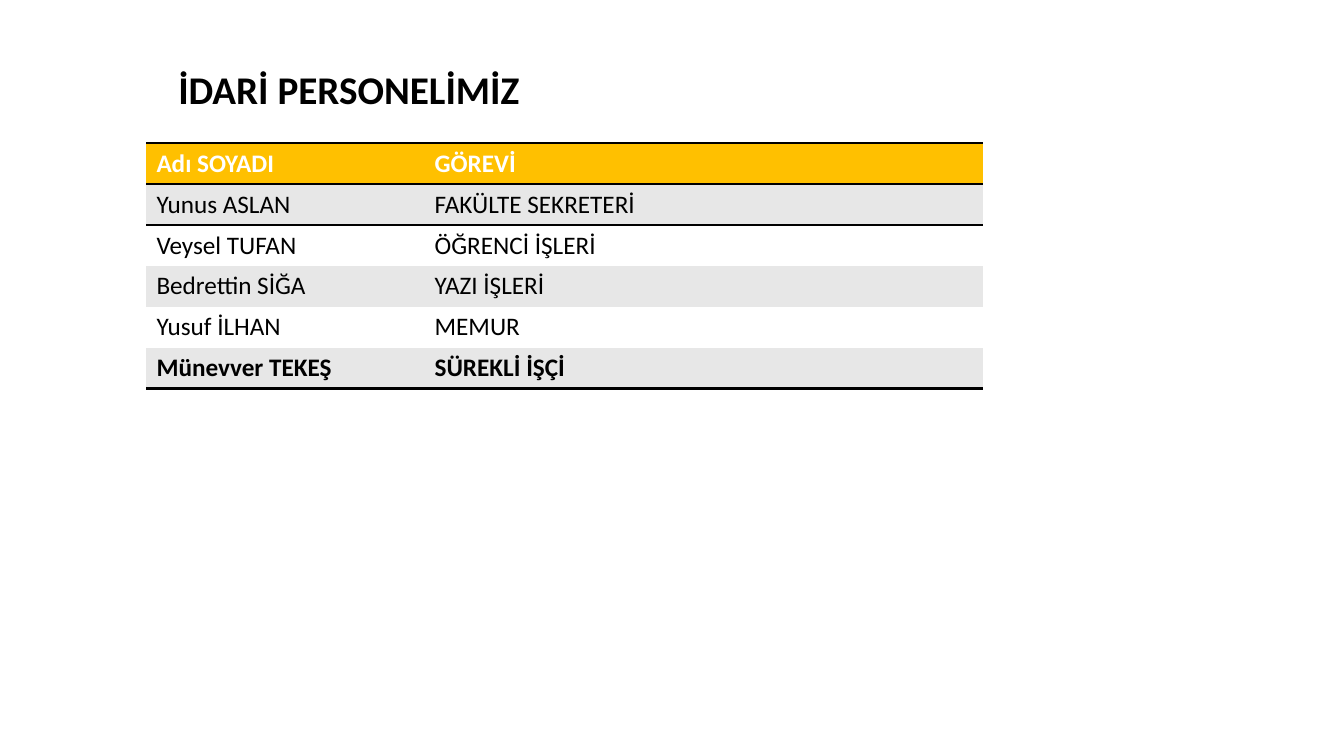
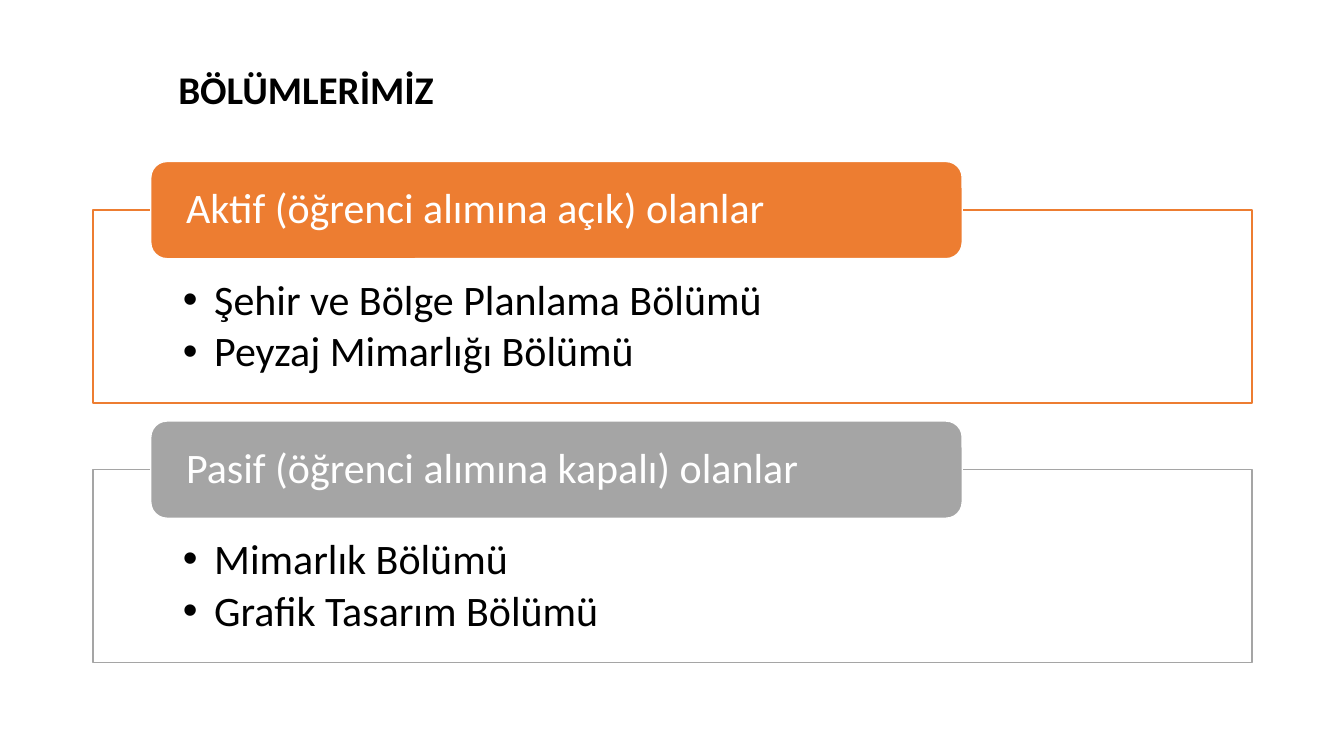
from dataclasses import dataclass

from lxml import etree
from pptx import Presentation
from pptx.dml.color import RGBColor
from pptx.enum.shapes import MSO_SHAPE
from pptx.enum.text import MSO_ANCHOR, MSO_AUTO_SIZE, PP_ALIGN
from pptx.oxml.ns import qn
from pptx.util import Cm, Pt

RECTANGLE, ROUNDED = MSO_SHAPE.RECTANGLE, MSO_SHAPE.ROUNDED_RECTANGLE
TOP, MIDDLE = MSO_ANCHOR.TOP, MSO_ANCHOR.MIDDLE
LEFT, NO_AUTO_SIZE = PP_ALIGN.LEFT, MSO_AUTO_SIZE.NONE
TITLE_ONLY = 5
NO_STYLE_NO_GRID = "{2D5ABB26-0587-4C30-8999-92F81FD0307C}"


@dataclass(frozen=True)
class Theme:
    font: str = "Calibri"
    black: str = "000000"
    white: str = "FFFFFF"
    gold: str = "FFC000"
    band: str = "E7E7E7"
    orange: str = "ED7D31"
    grey: str = "A5A5A5"
    title_size: int = 28
    table_size: int = 18
    body_size: int = 30


theme = Theme()


def format_paragraph(paragraph, size, color, bold=False, **spacing):
    for name, value in {"alignment": LEFT, **spacing}.items():
        setattr(paragraph, name, value)
    font_format = {"name": theme.font, "size": Pt(size), "bold": bold}
    for name, value in font_format.items():
        setattr(paragraph.font, name, value)
    paragraph.font.color.rgb = RGBColor.from_string(color)


def add_box(slide, kind, place, fill, line, frame_format):
    shape = slide.shapes.add_shape(kind, *(Cm(length) for length in place))
    shape.shadow.inherit = False
    shape.fill.solid()
    shape.fill.fore_color.rgb = RGBColor.from_string(fill)
    shape.line.color.rgb = RGBColor.from_string(line)
    shape.line.width = Pt(1)
    for name, value in {"word_wrap": True, **frame_format}.items():
        setattr(shape.text_frame, name, value)
    return shape


presentation = Presentation()
presentation.slide_width, presentation.slide_height = Cm(33.87), Cm(19.05)

# Slides with their shared title style
slides = []
for heading in ("İDARİ PERSONELİMİZ", "BÖLÜMLERİMİZ"):
    slide = presentation.slides.add_slide(presentation.slide_layouts[TITLE_ONLY])
    title = slide.shapes.title
    title_place = {"left": 4.24, "top": 1.02, "width": 20.52, "height": 2.59}
    for name, length in title_place.items():
        setattr(title, name, Cm(length))
    title.text_frame.text = heading
    title.text_frame.vertical_anchor = MIDDLE
    title.text_frame.auto_size = NO_AUTO_SIZE
    format_paragraph(title.text_frame.paragraphs[0], theme.title_size,
                     theme.black, True, line_spacing=0.9)
    slides.append(slide)
staff_slide, departments_slide = slides

# Staff table
staff = [
    ("Adı SOYADI", "GÖREVİ"),
    ("Yunus ASLAN", "FAKÜLTE SEKRETERİ"),
    ("Veysel TUFAN", "ÖĞRENCİ İŞLERİ"),
    ("Bedrettin SİĞA", "YAZI İŞLERİ"),
    ("Yusuf İLHAN", "MEMUR"),
    ("Münevver TEKEŞ", "SÜREKLİ İŞÇİ"),
]
last_row = len(staff) - 1
row_height = Cm(1.03)
table_frame = staff_slide.shapes.add_table(
    len(staff), 2, Cm(3.69), Cm(3.61), Cm(21.08), row_height * len(staff))
table = table_frame.table
table.horz_banding = False
next(table_frame.element.iter(qn("a:tableStyleId"))).text = NO_STYLE_NO_GRID
for column, width in zip(table.columns, (7.01, 14.07)):
    column.width = Cm(width)

for row_index, values in enumerate(staff):
    table.rows[row_index].height = row_height
    is_header = row_index == 0
    fill = theme.gold if is_header else theme.band if row_index % 2 else theme.white
    # Rules lie above and below the header and below the last row
    edges = []
    if row_index in (0, 1):
        edges.append("a:lnT")
    if row_index in (0, last_row):
        edges.append("a:lnB")
    for column_index, value in enumerate(values):
        cell = table.cell(row_index, column_index)
        cell.text = value
        format_paragraph(cell.text_frame.paragraphs[0], theme.table_size,
                         theme.white if is_header else theme.black,
                         row_index in (0, last_row))
        properties = cell._tc.get_or_add_tcPr()
        for edge in edges:
            border = etree.SubElement(properties, qn(edge), w=str(Pt(2)))
            border_fill = etree.SubElement(border, qn("a:solidFill"))
            etree.SubElement(border_fill, qn("a:srgbClr"), val=theme.black)
        cell.fill.solid()
        cell.fill.fore_color.rgb = RGBColor.from_string(fill)

# Department groups: outlined list with a label over its top edge
groups = [
    ("Aktif (öğrenci alımına açık) olanlar", theme.orange,
     ["Şehir ve Bölge Planlama Bölümü", "Peyzaj Mimarlığı Bölümü"]),
    ("Pasif (öğrenci alımına kapalı) olanlar", theme.grey,
     ["Mimarlık Bölümü", "Grafik Tasarım Bölümü"]),
]
list_format = {
    "vertical_anchor": TOP, "margin_left": Cm(2.27), "margin_right": Cm(2.27),
    "margin_top": Cm(1.73), "margin_bottom": Cm(0.58),
}
label_format = {
    "vertical_anchor": MIDDLE, "margin_left": Cm(0.77), "margin_right": Cm(0.77),
    "margin_top": 0, "margin_bottom": 0,
}
first_top, group_step, label_height = 4.07, 6.54, 2.45
for group_index, (label, color, departments) in enumerate(groups):
    label_top = first_top + group_index * group_step
    list_box = add_box(departments_slide, RECTANGLE,
                       (2.34, label_top + label_height / 2, 29.21, 4.86),
                       theme.white, color, list_format)
    list_box.text_frame.text = "\n".join(departments)
    for paragraph in list_box.text_frame.paragraphs:
        paragraph.level = 1
        properties = paragraph._p.get_or_add_pPr()
        properties.set("marL", str(Cm(0.79)))
        properties.set("indent", str(-Cm(0.79)))
        etree.SubElement(properties, qn("a:buFont"), typeface="Arial")
        etree.SubElement(properties, qn("a:buChar"), char="•")
        format_paragraph(paragraph, theme.body_size, theme.black,
                         line_spacing=0.9, space_after=Pt(4.5))

    label_box = add_box(departments_slide, ROUNDED,
                        (3.8, label_top, 20.45, label_height),
                        color, theme.white, label_format)
    label_box.text_frame.text = label
    format_paragraph(label_box.text_frame.paragraphs[0], theme.body_size,
                     theme.white, line_spacing=0.9)

presentation.save("out.pptx")
